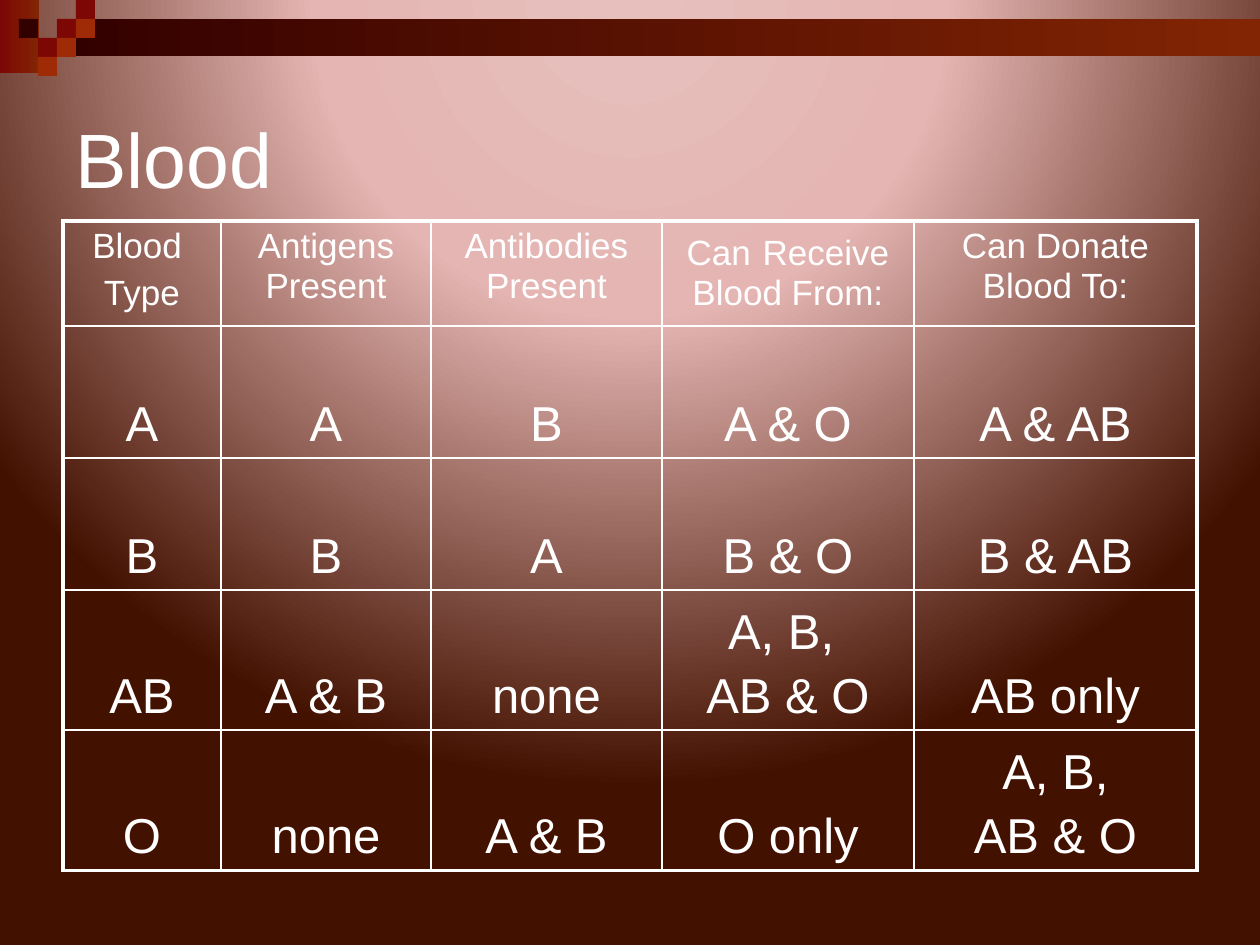
from dataclasses import dataclass

from lxml.etree import SubElement
from pptx import Presentation
from pptx.dml.color import RGBColor
from pptx.enum.shapes import MSO_SHAPE
from pptx.enum.text import MSO_ANCHOR, PP_ALIGN
from pptx.oxml.ns import qn
from pptx.util import Emu, Pt

PX_PER_INCH = 126
FONT = "Arial"
COLORS = {
    "white": "FFFFFF",
    "red": "7C0704",
    "rust": "822504",
    "orange": "9E2A06",
    "maroon": "330000",
    "glow": "E7C0BD",
    "rose": "E4B5B2",
    "brown": "431100",
}


@dataclass(frozen=True)
class Band:
    left: int
    top: int
    width: int
    height: int
    colors: tuple[str, ...]


@dataclass(frozen=True)
class Run:
    text: str
    size: int


SQUARE = 19
# column, row, color of each square in the corner mosaic
MOSAIC = [
    (3, 1, "red"), (4, 0, "red"), (4, 1, "orange"), (2, 2, "red"),
    (1, 1, "maroon"), (3, 2, "orange"), (2, 3, "orange"),
]
BANDS = [
    Band(0, 0, 39, 73, ("red", "rust")),
    Band(57, 19, 1203, 37, ("maroon", "rust")),
] + [
    Band(column * SQUARE, row * SQUARE, SQUARE, SQUARE, (color,))
    for column, row, color in MOSAIC
]

HEADER_SIZE, BODY_SIZE = 20, 28
COLUMN_WIDTHS = [158, 210, 231, 252, 283]
ROW_HEIGHTS = [105, 132, 132, 132, 132]
# each cell is a list of lines; a line is a string or a tuple of runs
ROWS = [
    [
        ["Blood ", "Type"],
        ["Antigens Present"],
        ["Antibodies Present"],
        [(Run("Can", 20), Run(" ", 24), Run("Receive Blood From:", 20))],
        ["Can Donate Blood To:"],
    ],
    [["A"], ["A"], ["B"], ["A & O"], ["A & AB"]],
    [["B"], ["B"], ["A"], ["B & O"], ["B & AB"]],
    [["AB"], ["A & B"], ["none"], ["A, B, ", "AB & O"], ["AB only"]],
    [["O"], ["none"], ["A & B"], ["O only"], ["A, B,", "AB & O"]],
]


def px(length: int) -> Emu:
    return Emu(round(length * 914400 / PX_PER_INCH))


def rgb(name: str) -> RGBColor:
    return RGBColor.from_string(COLORS[name])


def paint_background(slide) -> None:
    """Fill the slide with a radial glow centred above its top edge."""
    slide.background.fill.gradient()
    gradient = slide.element.find(".//" + qn("a:gradFill"))
    for child in list(gradient):
        gradient.remove(child)
    stops = SubElement(gradient, qn("a:gsLst"))
    for percent, name in [(0, "glow"), (40, "rose"), (100, "brown")]:
        stop = SubElement(stops, qn("a:gs"), pos=str(percent * 1000))
        SubElement(stop, qn("a:srgbClr"), val=COLORS[name])
    circle = SubElement(gradient, qn("a:path"), path="circle")
    SubElement(circle, qn("a:fillToRect"), l="50000", t="-80000", r="50000", b="180000")


def add_band(slide, band: Band) -> None:
    shape = slide.shapes.add_shape(
        MSO_SHAPE.RECTANGLE, px(band.left), px(band.top), px(band.width), px(band.height)
    )
    shape.shadow.inherit = False
    shape.line.fill.background()
    if len(band.colors) == 1:
        shape.fill.solid()
        shape.fill.fore_color.rgb = rgb(band.colors[0])
        return
    shape.fill.gradient()
    shape.fill.gradient_angle = 0
    for stop, name in zip(shape.fill.gradient_stops, band.colors):
        stop.color.rgb = rgb(name)


def write_line(paragraph, line, *, size: int, align=PP_ALIGN.LEFT, space_before: int = 0) -> None:
    """Write one paragraph; space_before is a percentage of the line height."""
    paragraph.alignment = align
    if space_before:
        spacing = SubElement(paragraph._p.get_or_add_pPr(), qn("a:spcBef"))
        SubElement(spacing, qn("a:spcPct"), val=str(space_before * 1000))
    for part in (Run(line, size),) if isinstance(line, str) else line:
        run = paragraph.add_run()
        run.text = part.text
        run.font.name = FONT
        run.font.size = Pt(part.size)
        run.font.color.rgb = rgb("white")


def add_title(slide, text: str) -> None:
    box = slide.shapes.add_textbox(px(63), px(63), px(1134), px(189))
    box.text_frame.word_wrap = True
    box.text_frame.vertical_anchor = MSO_ANCHOR.MIDDLE
    write_line(box.text_frame.paragraphs[0], text, size=44)


def set_borders(cell, widths: dict[str, float]) -> None:
    properties = cell._tc.get_or_add_tcPr()
    for side, width in widths.items():
        line = SubElement(properties, qn(f"a:ln{side}"), w=str(Pt(width)))
        fill = SubElement(line, qn("a:solidFill"))
        SubElement(fill, qn("a:srgbClr"), val=COLORS["white"])


def add_blood_table(slide) -> None:
    last_row, last_column = len(ROWS) - 1, len(COLUMN_WIDTHS) - 1
    table = slide.shapes.add_table(
        len(ROWS), len(COLUMN_WIDTHS), px(63), px(221),
        px(sum(COLUMN_WIDTHS)), px(sum(ROW_HEIGHTS)),
    ).table
    table.first_row = table.horz_banding = False
    for column, width in zip(table.columns, COLUMN_WIDTHS):
        column.width = px(width)
    for row, height in zip(table.rows, ROW_HEIGHTS):
        row.height = px(height)

    for row_index, row in enumerate(ROWS):
        for column_index, lines in enumerate(row):
            cell = table.cell(row_index, column_index)
            outer_edges = {
                "L": column_index == 0,
                "R": column_index == last_column,
                "T": row_index == 0,
                "B": row_index == last_row,
            }
            set_borders(cell, {side: 2.25 if outer else 1 for side, outer in outer_edges.items()})
            cell.fill.background()
            is_header = row_index == 0
            cell.vertical_anchor = MSO_ANCHOR.TOP if is_header else MSO_ANCHOR.BOTTOM
            frame = cell.text_frame
            for index, line in enumerate(lines):
                write_line(
                    frame.add_paragraph() if index else frame.paragraphs[0], line,
                    size=HEADER_SIZE if is_header else BODY_SIZE,
                    align=PP_ALIGN.CENTER, space_before=20,
                )


def main() -> None:
    presentation = Presentation()
    presentation.slide_width, presentation.slide_height = px(1260), px(945)
    slide = presentation.slides.add_slide(presentation.slide_layouts[6])
    paint_background(slide)
    for band in BANDS:
        add_band(slide, band)
    add_title(slide, "Blood")
    add_blood_table(slide)
    presentation.save("out.pptx")


if __name__ == "__main__":
    main()
